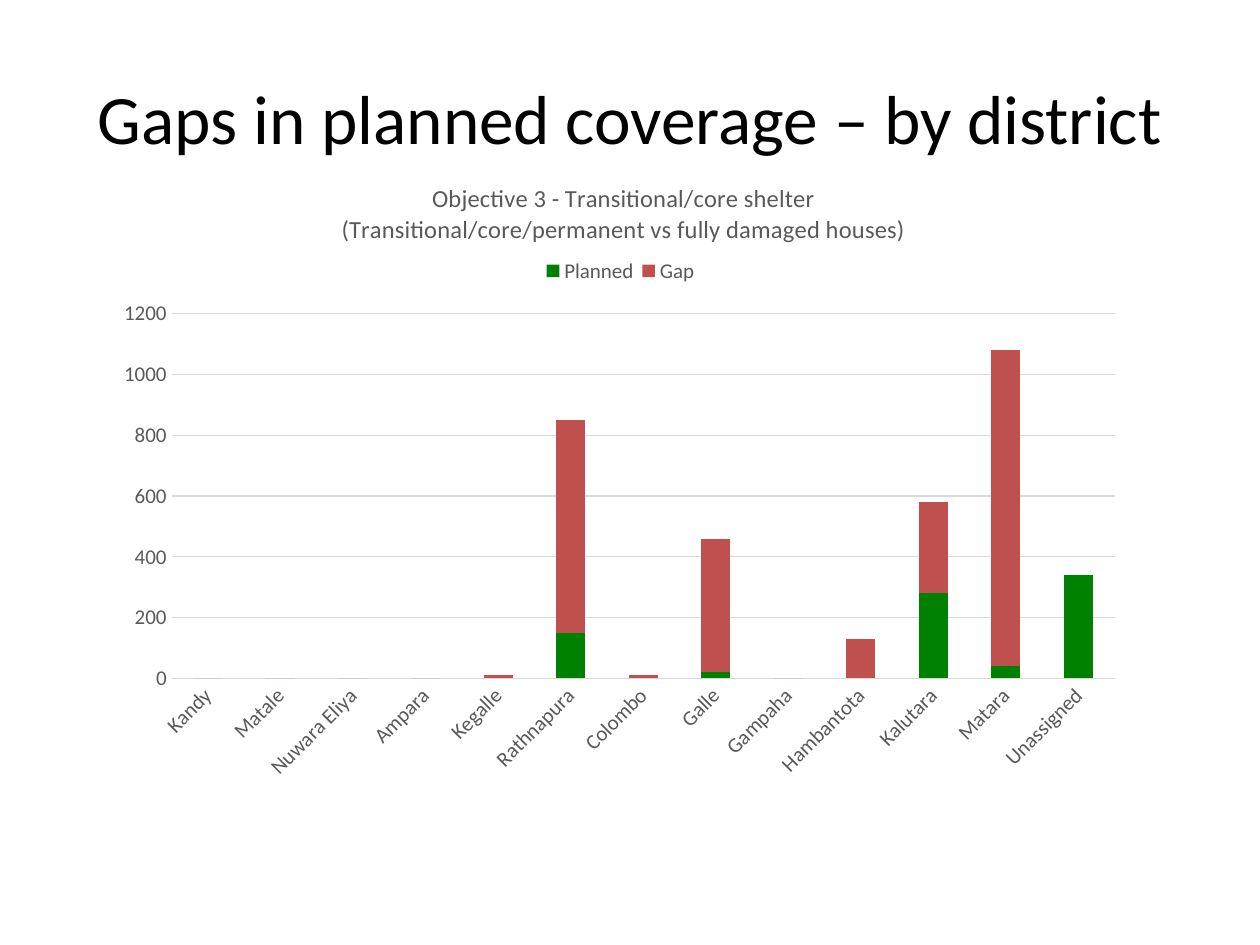
from dataclasses import dataclass

from pptx import Presentation
from pptx.chart.data import CategoryChartData
from pptx.dml.color import RGBColor
from pptx.enum.chart import XL_CHART_TYPE as ChartType
from pptx.enum.chart import XL_LEGEND_POSITION as LegendPosition
from pptx.enum.chart import XL_TICK_MARK as TickMark
from pptx.enum.text import MSO_ANCHOR as Anchor
from pptx.enum.text import PP_ALIGN as Align
from pptx.oxml import parse_xml
from pptx.oxml.ns import nsdecls
from pptx.util import Inches, Pt


@dataclass(frozen=True)
class Theme:
    font: str = "Calibri"
    black: RGBColor = RGBColor(0, 0, 0)
    label: RGBColor = RGBColor(0x59, 0x59, 0x59)
    grid: RGBColor = RGBColor(0xD9, 0xD9, 0xD9)
    planned: RGBColor = RGBColor(0, 0x80, 0)
    gap: RGBColor = RGBColor(0xC0, 0x50, 0x4D)
    title_size: float = 39.6
    heading_size: float = 14
    label_size: float = 12
    line_width: float = 0.75


THEME = Theme()

# District: (planned, gap)
COVERAGE = {
    "Kandy": (None, 0),
    "Matale": (None, 0),
    "Nuwara Eliya": (None, 0),
    "Ampara": (None, 0),
    "Kegalle": (None, 10),
    "Rathnapura": (150, 700),
    "Colombo": (None, 10),
    "Galle": (20, 440),
    "Gampaha": (None, 0),
    "Hambantota": (None, 130),
    "Kalutara": (280, 300),
    "Matara": (40, 1040),
    "Unassigned": (340, None),
}
HEADING = (
    "Objective 3 - Transitional/core shelter",
    "(Transitional/core/permanent vs fully damaged houses)",
)


def style_font(font, size, color):
    font.name = THEME.font
    font.size = Pt(size)
    font.bold = False
    font.color.rgb = color


def style_line(line):
    line.color.rgb = THEME.grid
    line.width = Pt(THEME.line_width)


def place(element, x, y, width=None, height=None, inner=False):
    """Fix a chart part at fractions of the chart area."""
    for old in element.findall("{*}layout"):
        element.remove(old)
    target = '<c:layoutTarget val="inner"/>' if inner else ""
    modes = '<c:xMode val="edge"/><c:yMode val="edge"/>'
    sizes = {"x": x, "y": y, "w": width, "h": height}
    values = "".join(f'<c:{key} val="{value}"/>'
                     for key, value in sizes.items() if value is not None)
    layout = parse_xml(f'<c:layout {nsdecls("c")}><c:manualLayout>{target}{modes}'
                       f'{values}</c:manualLayout></c:layout>')
    before = element.find("{*}tx")
    if before is None:
        before = element.find("{*}legendPos")
    if before is None:
        element.insert(0, layout)
    else:
        before.addnext(layout)


def add_title(slide, text):
    title = slide.shapes.title
    title.left, title.top = Inches(0.5), Inches(0.3)
    title.width, title.height = Inches(9), Inches(1.25)
    frame = title.text_frame
    frame.text = text
    frame.vertical_anchor = Anchor.MIDDLE
    frame.paragraphs[0].alignment = Align.CENTER
    style_font(frame.paragraphs[0].font, THEME.title_size, THEME.black)


def add_heading(chart):
    frame = chart.chart_title.text_frame
    frame.text = "\n".join(HEADING)
    for paragraph in frame.paragraphs:
        style_font(paragraph.font, THEME.heading_size, THEME.label)
    chart.chart_title.include_in_layout = False
    place(chart.chart_title._element, 0.226, 0.04)


def add_legend(chart):
    chart.has_legend = True
    chart.legend.position = LegendPosition.TOP
    chart.legend.include_in_layout = False
    style_font(chart.legend.font, THEME.label_size, THEME.label)
    place(chart.legend._element, 0.42, 0.16, 0.16, 0.05)


def style_axes(chart):
    for axis in (chart.category_axis, chart.value_axis):
        axis.major_tick_mark = axis.minor_tick_mark = TickMark.NONE
        style_font(axis.tick_labels.font, THEME.label_size, THEME.label)

    districts = chart.category_axis
    style_line(districts.format.line)
    districts._element.txPr.find("{*}bodyPr").set("rot", str(-45 * 60000))

    houses = chart.value_axis
    houses.minimum_scale, houses.maximum_scale = 0, 1200
    houses.major_unit = 200
    houses.format.line.fill.background()
    style_line(houses.major_gridlines.format.line)


def add_coverage_chart(slide):
    data = CategoryChartData()
    data.categories = list(COVERAGE)
    for name, values in zip(("Planned", "Gap"), zip(*COVERAGE.values())):
        data.add_series(name, values)
    chart = slide.shapes.add_chart(
        ChartType.COLUMN_STACKED, Inches(0.83), Inches(1.21),
        Inches(8.19), Inches(5.08), data).chart
    style_font(chart.font, THEME.label_size, THEME.black)

    # Stacked columns
    plot = chart.plots[0]
    plot.gap_width, plot.overlap = 150, 100
    plot.vary_by_categories = False
    for series, color in zip(plot.series, (THEME.planned, THEME.gap)):
        series.format.fill.solid()
        series.format.fill.fore_color.rgb = color
        series.invert_if_negative = False

    add_heading(chart)
    add_legend(chart)
    style_axes(chart)
    place(chart._chartSpace.chart.plotArea, 0.065, 0.252, 0.914, 0.57, inner=True)


def main():
    deck = Presentation()
    deck.slide_width, deck.slide_height = Inches(10), Inches(7.5)
    slide = deck.slides.add_slide(deck.slide_layouts[5])
    add_title(slide, "Gaps in planned coverage – by district")
    add_coverage_chart(slide)
    deck.save("out.pptx")


if __name__ == "__main__":
    main()
